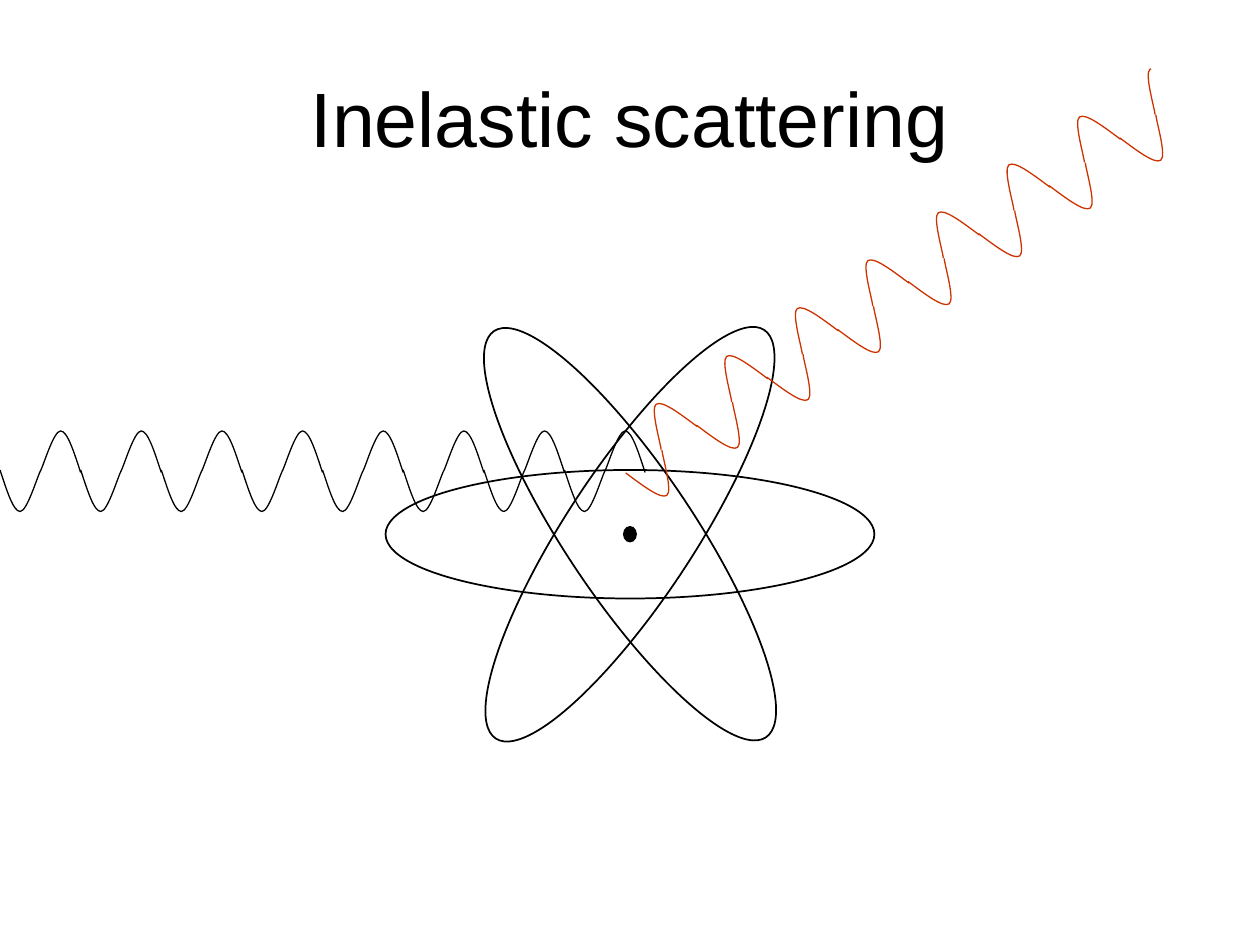
from lxml import etree
from pptx import Presentation
from pptx.dml.color import RGBColor
from pptx.enum import shapes, text
from pptx.oxml.ns import qn
from pptx.util import Inches, Pt

BLACK, RED, WHITE = "000000", "CC3300", "FFFFFF"
# Start and two cubic Bezier pieces of a wave trough, as fractions of its box
TROUGH = [(0, 0), (0.17, 0.5), (0.33, 1), (0.5, 1), (0.67, 1), (0.92, 0.18), (1, 0.03)]


def color(value):
    return RGBColor.from_string(value)


def bend(shape):
    """Turn each three line segments of a freeform into one cubic Bezier curve."""
    segments = list(shape._element.iter(qn("a:lnTo")))
    for first in range(0, len(segments), 3):
        curve = etree.Element(qn("a:cubicBezTo"))
        segments[first].addprevious(curve)
        for segment in segments[first:first + 3]:
            curve.append(segment[0])
            segment.getparent().remove(segment)


class Deck:
    """Holds the current slide and the style of its elements."""

    font = "Arial"
    title_size = 44
    thin, medium = 0.75, 1

    def __init__(self, presentation):
        self.slide = presentation.slides.add_slide(presentation.slide_layouts[6])

    def paint(self, shape, fill=None, line=None, width=thin):
        shape.shadow.inherit = False
        if fill:
            shape.fill.solid()
            shape.fill.fore_color.rgb = color(fill)
        else:
            shape.fill.background()
        if line:
            shape.line.color.rgb = color(line)
            shape.line.width = Pt(width)
        else:
            shape.line.fill.background()

    def title(self, words, left, top, width, height):
        box = self.slide.shapes.add_textbox(*map(Inches, (left, top, width, height)))
        frame = box.text_frame
        frame.word_wrap = True
        frame.vertical_anchor = text.MSO_ANCHOR.MIDDLE
        frame.text = words
        paragraph = frame.paragraphs[0]
        paragraph.alignment = text.PP_ALIGN.CENTER
        font = paragraph.runs[0].font
        font.name, font.size = self.font, Pt(self.title_size)
        font.color.rgb = color(BLACK)

    def ellipse(self, left, top, width, height, rotation=0, fill=None, line_width=thin):
        shape = self.slide.shapes.add_shape(
            shapes.MSO_SHAPE.OVAL, *map(Inches, (left, top, width, height)))
        shape.rotation = rotation
        self.paint(shape, fill, BLACK, line_width)

    def half_wave(self, group, left, top, width, height, rotation, line):
        points = [(Inches(left + x * width), Inches(top + y * height)) for x, y in TROUGH]
        builder = group.shapes.build_freeform(*points[0])
        builder.add_line_segments(points[1:], close=False)
        shape = builder.convert_to_shape()
        bend(shape)
        shape.rotation = rotation
        self.paint(shape, line=line)

    def wave(self, trough, crest, step, size, rotation, line, periods=8):
        """Draw a grouped wave from troughs and the same curve turned half round."""
        group = self.slide.shapes.add_group_shape()
        for period in range(periods):
            for (left, top), turn in ((trough, 0), (crest, 180)):
                self.half_wave(group, left + period * step[0], top + period * step[1],
                               *size, (rotation + turn) % 360, line)
        return group

    def cover(self, group, left, top, width, height, rotation):
        shape = group.shapes.add_shape(
            shapes.MSO_SHAPE.RECTANGLE, *map(Inches, (left, top, width, height)))
        shape.rotation = rotation
        self.paint(shape, WHITE)


def main():
    presentation = Presentation()
    presentation.slide_width, presentation.slide_height = Inches(10), Inches(7.5)
    deck = Deck(presentation)

    deck.wave((0, 3.73), (0.32, 3.42), (0.64, 0), (0.32, 0.33), 0, BLACK)
    deck.title("Inelastic scattering", 0.5, 0.3, 9, 1.25)

    for rotation in (0, 303.3, 56.2):
        deck.ellipse(3.06, 3.73, 3.88, 1.02, rotation, line_width=deck.medium)
    deck.ellipse(4.95, 4.18, 0.1, 0.12, fill=BLACK)

    scattered_angle = 325.8
    scattered = deck.wave((5.03, 3.63), (5.13, 3.18), (0.56, -0.38), (0.34, 0.33),
                          scattered_angle, RED)
    deck.cover(scattered, 9.28, -0.05, 0.56, 1.44, scattered_angle)

    presentation.save("out.pptx")


if __name__ == "__main__":
    main()
